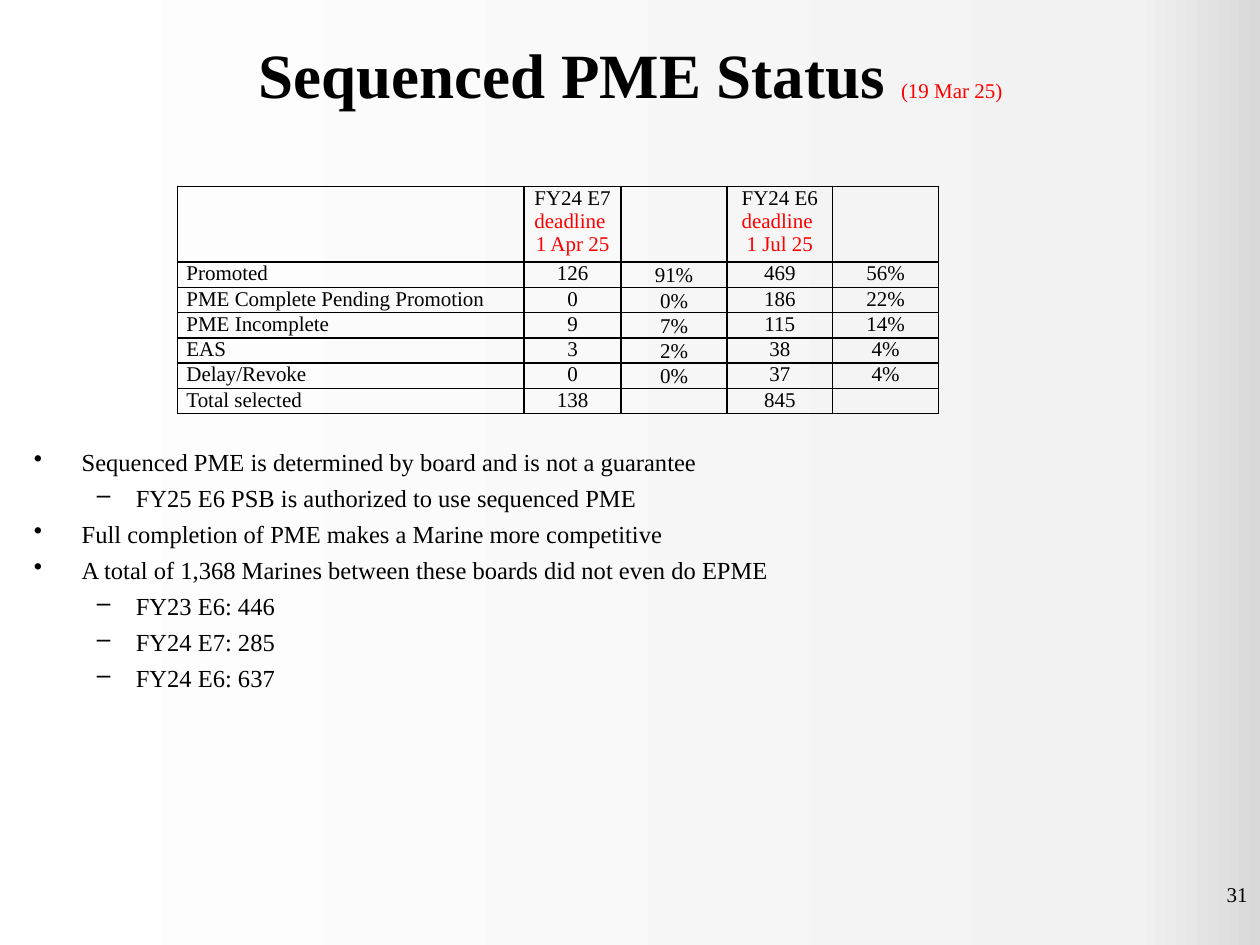
"""Build the Sequenced PME Status slide."""
from copy import deepcopy

from pptx import Presentation
from pptx.dml.color import RGBColor
from pptx.enum.text import MSO_ANCHOR as ANCHOR, PP_ALIGN as ALIGN
from pptx.oxml import parse_xml
from pptx.oxml.ns import nsdecls, qn
from pptx.util import Inches, Pt

BLACK = RGBColor(0x00, 0x00, 0x00)
RED = RGBColor(0xFF, 0x00, 0x00)
BACKGROUND = [
    (0, RGBColor(0xFF, 0xFF, 0xFF)),
    (0.9, RGBColor(0xF2, 0xF2, 0xF2)),
    (1, RGBColor(0xD9, 0xD9, 0xD9)),
]
FONT = "Times New Roman"

HEADER = ["", ("FY24 E7", "deadline ", "1 Apr 25"), "",
          ("FY24 E6", "deadline ", "1 Jul 25"), ""]
ROWS = [
    ["Promoted", "126", "91%", "469", "56%"],
    ["PME Complete Pending Promotion", "0", "0%", "186", "22%"],
    ["PME Incomplete", "9", "7%", "115", "14%"],
    ["EAS", "3", "2%", "38", "4%"],
    ["Delay/Revoke", "0", "0%", "37", "4%"],
    ["Total selected", "138", "", "845", ""],
]
COL_WIDTHS = [2.75, 0.77, 0.84, 0.84, 0.84]
ROW_HEIGHT = 0.18

BULLETS = [
    (0, "Sequenced PME is determined by board and is not a guarantee"),
    (1, "FY25 E6 PSB is authorized to use sequenced PME"),
    (0, "Full completion of PME makes a Marine more competitive"),
    (0, "A total of 1,368 Marines between these boards did not even do EPME"),
    (1, "FY23 E6: 446"),
    (1, "FY24 E7: 285"),
    (1, "FY24 E6: 637"),
]
LEVELS = [("•", 0.38, 0.38), ("–", 0.81, 0.31)]


def add_text(p, text, size=12, color=BLACK, bold=False, align=None):
    if align is not None:
        p.alignment = align
    r = p.add_run()
    r.text = text
    r.font.name, r.font.size, r.font.bold = FONT, Pt(size), bold
    r.font.color.rgb = color


def add_box(s, left, top, width, height, anchor=ANCHOR.TOP):
    box = s.shapes.add_textbox(*map(Inches, (left, top, width, height)))
    tf = box.text_frame
    tf.word_wrap = True
    tf.vertical_anchor = anchor
    return tf


def paint_background(s):
    fill = s.background.fill
    fill.gradient()
    fill.gradient_angle = 0
    first = next(s.element.iter(qn("a:gs")))
    first.addnext(deepcopy(first))
    for stop, (position, color) in zip(fill.gradient_stops, BACKGROUND):
        stop.position = position
        stop.color.rgb = color


def add_borders(cell):
    tc_pr = cell._tc.get_or_add_tcPr()
    for i, side in enumerate(("lnL", "lnR", "lnT", "lnB")):
        tc_pr.insert(i, parse_xml(
            f'<a:{side} {nsdecls("a")} w="{Pt(1)}"><a:solidFill>'
            f'<a:srgbClr val="{BLACK}"/></a:solidFill></a:{side}>'))


def fill_cell(cell, content, row, col):
    cell.margin_left = cell.margin_right = Inches(0.07)
    cell.margin_top = cell.margin_bottom = 0
    cell.fill.background()
    add_borders(cell)
    if row and col == 2:
        cell.vertical_anchor = ANCHOR.BOTTOM
    tf = cell.text_frame
    if not content:
        tf.paragraphs[0]._p.append(parse_xml(
            f'<a:endParaRPr {nsdecls("a")} sz="1200"/>'))
        return
    lines = content if isinstance(content, tuple) else (content,)
    for i, line in enumerate(lines):
        p = tf.add_paragraph() if i else tf.paragraphs[0]
        add_text(p, line, color=RED if i else BLACK,
                 align=ALIGN.CENTER if col else ALIGN.LEFT)


def add_status_table(s):
    rows = [HEADER] + ROWS
    frame = s.shapes.add_table(
        len(rows), len(COL_WIDTHS), Inches(1.41), Inches(1.48),
        Inches(sum(COL_WIDTHS)), Inches(ROW_HEIGHT * len(rows)))
    table = frame.table
    table.first_row = table.horz_banding = False
    for column, width in zip(table.columns, COL_WIDTHS):
        column.width = Inches(width)
    for i, row in enumerate(rows):
        table.rows[i].height = Inches(ROW_HEIGHT)
        for j, content in enumerate(row):
            fill_cell(table.cell(i, j), content, i, j)


def add_bullets(s):
    tf = add_box(s, 0.17, 3.5, 8.5, 3.58)
    for i, (level, text) in enumerate(BULLETS):
        p = tf.add_paragraph() if i else tf.paragraphs[0]
        char, margin, hang = LEVELS[level]
        p.level = level
        p_pr = p._p.get_or_add_pPr()
        p_pr.set("marL", str(Inches(margin)))
        p_pr.set("indent", str(-Inches(hang)))
        p_pr.append(parse_xml(f'<a:buChar {nsdecls("a")} char="{char}"/>'))
        if i:
            p.space_before = Pt(3.7)
        add_text(p, text, size=14)


def main():
    prs = Presentation()
    prs.slide_width, prs.slide_height = Inches(10), Inches(7.5)
    s = prs.slides.add_slide(prs.slide_layouts[6])
    paint_background(s)
    p = add_box(s, 0.41, 0, 9.19, 1.17, anchor=ANCHOR.MIDDLE).paragraphs[0]
    add_text(p, "Sequenced PME Status ", size=36, bold=True, align=ALIGN.CENTER)
    add_text(p, "(19 Mar 25)", color=RED)
    add_status_table(s)
    p = add_box(s, 7.67, 6.95, 2.33, 0.4).paragraphs[0]
    add_text(p, "31", align=ALIGN.RIGHT)
    add_bullets(s)
    prs.save("out.pptx")


if __name__ == "__main__":
    main()
